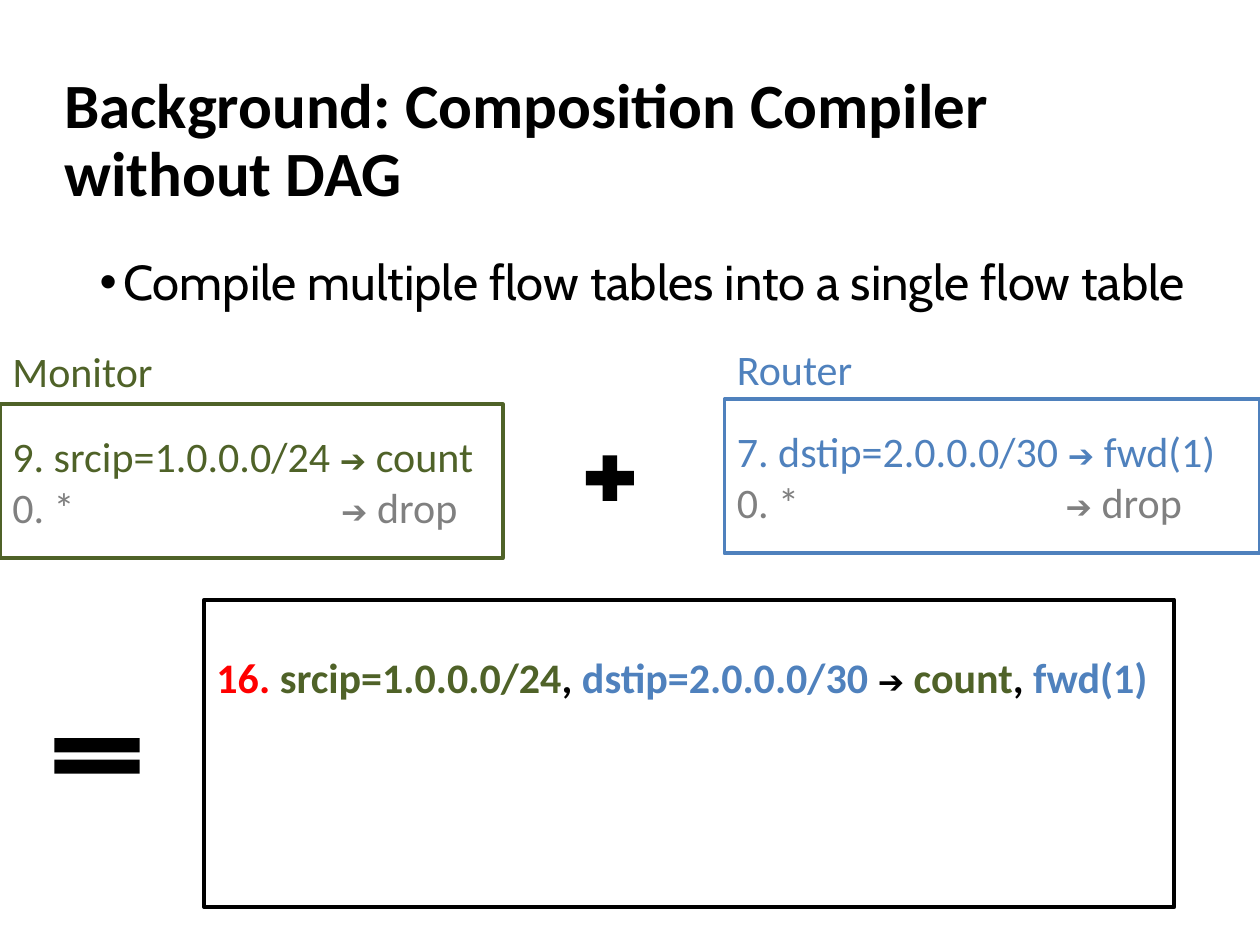
from dataclasses import dataclass

from lxml import etree
from pptx import Presentation
from pptx import util as u
from pptx.dml.color import RGBColor
from pptx.enum import shapes, text
from pptx.oxml.ns import qn


@dataclass(frozen=True)
class Theme:
    ink: str = "000000"
    paper: str = "FFFFFF"
    monitor: str = "4F6228"
    router: str = "4F81BD"
    muted: str = "808080"
    priority: str = "FF0000"
    heading_font: str = "Calibri"
    body_font: str = "Cabin"
    arrow_font: str = "Arial"
    title_size: int = 36
    body_size: int = 28
    rule_size: int = 24
    arrow_size: int = 18
    outline: float = 2.25


THEME = Theme()
ARROW = "➔"
CELL = u.Inches(0.1)
ARROW_COLUMN = 26.1


def cells(*counts):
    return [u.Emu(round(count * CELL)) for count in counts]


def style(font, size, name, color, bold=False):
    font.size, font.name, font.bold = u.Pt(size), name, bold
    font.color.rgb = RGBColor.from_string(color)


def fill_placeholder(box, area, wording, anchor):
    box.left, box.top, box.width, box.height = cells(*area)
    frame = box.text_frame
    frame.text = wording
    frame.auto_size = text.MSO_AUTO_SIZE.NONE
    frame.vertical_anchor = anchor
    para = frame.paragraphs[0]
    para.alignment = text.PP_ALIGN.LEFT
    para.line_spacing = 0.9
    para.space_before = u.Pt(0)
    return para


def add_bullet(para, indent):
    properties = para._p.get_or_add_pPr()
    properties.set("marL", str(indent))
    properties.set("indent", str(-indent))
    etree.SubElement(properties, qn("a:buFont"), typeface="Arial")
    etree.SubElement(properties, qn("a:buChar"), char="•")


def add_tab_stop(para, position):
    stops = etree.SubElement(para._p.get_or_add_pPr(), qn("a:tabLst"))
    etree.SubElement(stops, qn("a:tab"), pos=str(position), algn="l")


def add_solid(page, kind, area, fill):
    box = page.shapes.add_shape(kind, *cells(*area))
    box.shadow.inherit = False
    box.fill.solid()
    box.fill.fore_color.rgb = RGBColor.from_string(fill)
    box.line.fill.background()
    return box


def add_frame(page, area, outline):
    box = add_solid(page, shapes.MSO_SHAPE.RECTANGLE, area, THEME.paper)
    box.line.color.rgb = RGBColor.from_string(outline)
    box.line.width = u.Pt(THEME.outline)
    box.text_frame.word_wrap = True
    return box


def write_rule(para, spans, bold=False):
    para.alignment = text.PP_ALIGN.LEFT
    for wording, color in spans:
        span = para.add_run()
        span.text = wording
        if wording == ARROW:
            style(span.font, THEME.arrow_size, THEME.arrow_font, color)
        else:
            style(span.font, THEME.rule_size, THEME.heading_font, color, bold)


def add_label(page, area, wording, color):
    box = page.shapes.add_textbox(*cells(*area))
    box.text_frame.word_wrap = True
    para = box.text_frame.paragraphs[0]
    para.text = wording
    style(para.font, THEME.rule_size, THEME.heading_font, color)


def add_flow_table(page, name, label_top, area, color, match, action):
    add_label(page, (area[0], label_top, 20.5, 5.3), name, color)
    frame = add_frame(page, area, color).text_frame
    frame.vertical_anchor = text.MSO_ANCHOR.MIDDLE
    write_rule(frame.paragraphs[0],
               [(f"{match} ", color), (ARROW, color), (f" {action}", color)])
    fallback = frame.add_paragraph()
    add_tab_stop(fallback, cells(ARROW_COLUMN)[0])
    write_rule(fallback, [("0. *\t", THEME.muted), (ARROW, THEME.muted),
                          (" drop", THEME.muted)])


def add_composed_table(page, area):
    frame = add_frame(page, area, THEME.ink).text_frame
    frame.vertical_anchor = text.MSO_ANCHOR.TOP
    frame.margin_top = cells(4.1)[0]
    write_rule(frame.paragraphs[0], [
        ("16. ", THEME.priority),
        ("srcip=1.0.0.0/24", THEME.monitor),
        (", ", THEME.ink),
        ("dstip=2.0.0.0/30 ", THEME.router),
        (ARROW, THEME.ink),
        (" count", THEME.monitor),
        (", ", THEME.ink),
        ("fwd(1)", THEME.router),
    ], bold=True)


def main():
    deck = Presentation()
    deck.slide_width, deck.slide_height = cells(100, 75)
    page = deck.slides.add_slide(deck.slide_layouts[1])

    title = fill_placeholder(page.shapes.title, (4.1, 4, 86.2, 14.5),
                             "Background: Composition Compiler without DAG",
                             text.MSO_ANCHOR.MIDDLE)
    style(title.font, THEME.title_size, THEME.heading_font, THEME.ink, True)

    summary = fill_placeholder(page.placeholders[1], (6.9, 20, 92, 47.6),
                               "Compile multiple flow tables into a single flow table",
                               text.MSO_ANCHOR.TOP)
    add_bullet(summary, cells(1.9)[0])
    style(summary.font, THEME.body_size, THEME.body_font, THEME.ink)

    add_solid(page, shapes.MSO_SHAPE.MATH_PLUS, (45.8, 35.5, 5.2, 4.9), THEME.ink)
    add_flow_table(page, "Monitor", 26.9, (0, 32.1, 39.9, 12.2),
                   THEME.monitor, "9. srcip=1.0.0.0/24", "count")
    add_flow_table(page, "Router", 26.8, (57.5, 31.7, 42.5, 12.2),
                   THEME.router, "7. dstip=2.0.0.0/30", "fwd(1)")
    add_composed_table(page, (16.2, 47.6, 77, 24.4))
    add_solid(page, shapes.MSO_SHAPE.MATH_EQUAL, (3.1, 57.6, 9.2, 4.8), THEME.ink)

    deck.save("out.pptx")


if __name__ == "__main__":
    main()
